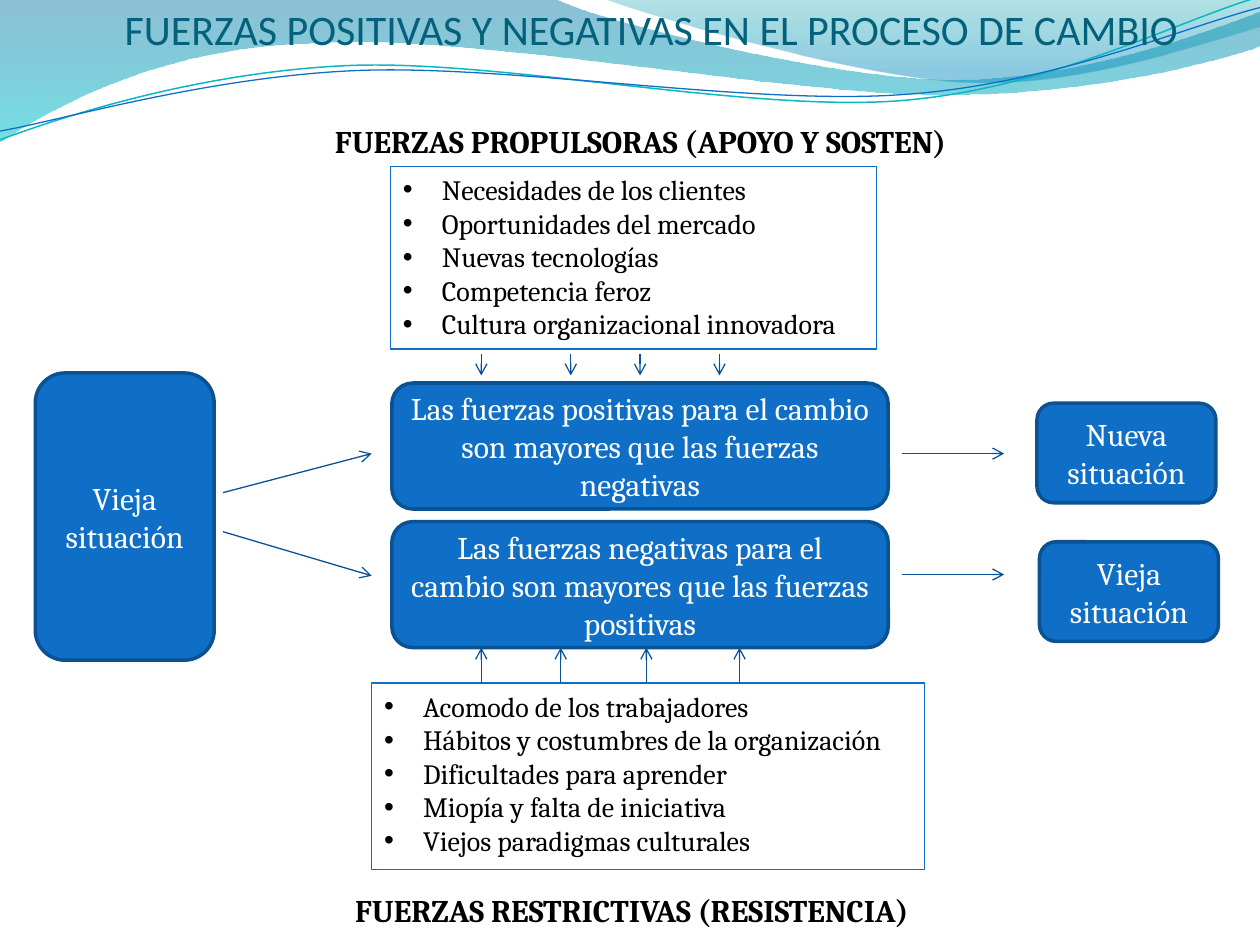
"""Build a slide on the forces for and against change."""
import math
from lxml import etree
from pptx import Presentation, util as u
from pptx.dml.color import RGBColor
from pptx.enum import shapes as s, text as t
from pptx.oxml.ns import qn

TITLE = "FUERZAS POSITIVAS Y NEGATIVAS EN EL PROCESO DE CAMBIO"
HEADS = [
    ("FUERZAS PROPULSORAS (APOYO Y SOSTEN)", (2.56, 0.92, 5.61, 0.4)),
    ("FUERZAS RESTRICTIVAS (RESISTENCIA)", (2.72, 7.02, 5.02, 0.4)),
]
LISTS = [
    (["Necesidades de los clientes", "Oportunidades del mercado",
      "Nuevas tecnologías", "Competencia feroz",
      "Cultura organizacional innovadora"], (3.1, 1.32, 3.86, 1.45)),
    (["Acomodo de los trabajadores", "Hábitos y costumbres de la organización",
      "Dificultades para aprender", "Miopía y falta de iniciativa",
      "Viejos paradigmas culturales"], (2.95, 5.42, 4.39, 1.48)),
]
BOXES = [
    ("Vieja situación", (0.28, 2.96, 1.42, 2.28)),
    ("Nueva situación", (8.23, 3.2, 1.42, 0.79)),
    ("Vieja situación", (8.25, 4.3, 1.42, 0.79)),
    ("Las fuerzas positivas para el cambio son mayores que las fuerzas negativas",
     (3.11, 3.04, 3.94, 1)),
    ("Las fuerzas negativas para el cambio son mayores que las fuerzas positivas",
     (3.11, 4.14, 3.94, 1)),
]
DOWN = [3.82, 4.53, 5.08, 5.71]
UP = [3.82, 4.45, 5.13, 5.87]
ARROWS = [
    (1.77, 3.91, 2.95, 3.6), (1.77, 4.22, 2.95, 4.57),
    (7.16, 3.6, 7.97, 3.6), (7.16, 4.56, 7.97, 4.56),
    *[(x, 2.81, x, 2.98) for x in DOWN],
    *[(x, 5.42, x, 5.14) for x in UP],
]
BANDS = [
    ([(0, 0), (4.4, -0.01), (4.76, 0.17, 6.64, 0.63, 7.58, 0.63),
      (8.53, 0.63, 9.58, 0.26, 10, 0.09), (10.01, 0.36),
      (9.83, 0.44, 8.7, 0.76, 7.46, 0.75), (6.22, 0.75, 3.82, 0.28, 2.57, 0.34),
      (1.29, 0.36, 0.46, 0.83, -0.01, 1.13), (0, 0)],
     [(0, "0074A1", 45), (1, "00C6CF", 55)]),
    ([(4.79, -0.01), (5.09, 0.11, 6.82, 0.62, 7.69, 0.65),
      (8.56, 0.69, 9.61, 0.32, 10, 0.21), (10, 0), (4.79, -0.01)],
     [(0, "00A1A9", 30), (0.8, "008BBF", 45)]),
]
WAVES = [
    ([(0, 1.11), (0.48, 0.93, 1.58, 0.57, 2.77, 0.52),
      (3.95, 0.47, 5.93, 0.89, 7.13, 0.8), (8.33, 0.71, 9.38, 0.15, 9.98, -0.02)],
     "0AB8BF", 0.85),
    ([(0, 1.04), (0.47, 0.96, 1.64, 0.61, 2.83, 0.56),
      (4.03, 0.51, 5.97, 0.84, 7.17, 0.75), (8.36, 0.67, 9.41, 0.21, 10, 0.06)],
     "0F6FC6", 0.75),
]
TILT = -2.7
HUB = (4.99, 0.58)


def tint(color, code):
    color.rgb = RGBColor.from_string(code)


def place(at):
    return [u.Inches(v) for v in at]


def stroke(line, code, width):
    tint(line.color, code)
    line.width = u.Pt(width)


def write(shape, lines, size=18, font="Cambria", color="000000", bold=False,
          align=t.PP_ALIGN.LEFT, anchor=t.MSO_ANCHOR.TOP, bullet=False, wrap=True):
    frame = shape.text_frame
    frame.word_wrap = wrap
    frame.auto_size = (t.MSO_AUTO_SIZE.NONE if wrap
                       else t.MSO_AUTO_SIZE.SHAPE_TO_FIT_TEXT)
    frame.vertical_anchor = anchor
    frame.text = "\n".join(lines)
    for para in frame.paragraphs:
        para.alignment = align
        face = para.runs[0].font
        face.size, face.name, face.bold = u.Pt(size), font, bold
        tint(face.color, color)
        if bullet:
            props = para._p.get_or_add_pPr()
            props.set("marL", str(u.Inches(0.31)))
            props.set("indent", str(-u.Inches(0.31)))
            etree.SubElement(props, qn("a:buFont"), typeface="Arial")
            etree.SubElement(props, qn("a:buChar"), char="•")


def turn(dot, angle):
    a = math.radians(angle)
    x, y = dot[0] - HUB[0], dot[1] - HUB[1]
    return (HUB[0] + x * math.cos(a) - y * math.sin(a),
            HUB[1] + x * math.sin(a) + y * math.cos(a))


def curve(slide, path, close=False, tilt=0):
    dots = [turn(part[i:i + 2], -tilt) for part in path
            for i in range(0, len(part), 2)]
    pen = slide.shapes.build_freeform(*place(dots[0]))
    pen.add_line_segments([place(dot) for dot in dots[1:]], close=close)
    shape = pen.convert_to_shape()
    shape.shadow.inherit = False
    shape.rotation = tilt
    legs = iter(list(shape.element.iter(qn("a:lnTo"))))
    for part in path[1:]:
        leg = next(legs)
        if len(part) == 6:
            leg.addprevious(bend := etree.Element(qn("a:cubicBezTo")))
            for node in (leg, next(legs), next(legs)):
                bend.append(node[0])
                node.getparent().remove(node)
    return shape


def band(slide, path, stops):
    shape = curve(slide, path, close=True)
    shape.line.fill.background()
    shape.fill.gradient()
    shape.fill.gradient_angle = 270
    for stop, (pos, code, alpha) in zip(shape.fill.gradient_stops, stops):
        stop.position = pos
        tint(stop.color, code)
    for node, stop in zip(shape.element.iter(qn("a:srgbClr")), stops):
        etree.SubElement(node, qn("a:alpha"), val=str(stop[2] * 1000))


def wave(slide, path, code, width):
    shape = curve(slide, path, tilt=TILT)
    shape.fill.background()
    stroke(shape.line, code, width)


def box(slide, words, at):
    shape = slide.shapes.add_shape(s.MSO_SHAPE.ROUNDED_RECTANGLE, *place(at))
    shape.shadow.inherit = False
    stroke(shape.line, "0B5292", 2)
    shape.fill.solid()
    tint(shape.fill.fore_color, "0F6FC6")
    write(shape, [words], color="FFFFFF", align=t.PP_ALIGN.CENTER,
          anchor=t.MSO_ANCHOR.MIDDLE)


def arrow(slide, ends):
    link = slide.shapes.add_connector(s.MSO_CONNECTOR.STRAIGHT, *place(ends))
    stroke(link.line, "095295", 0.75)
    etree.SubElement(link.line._get_or_add_ln(), qn("a:tailEnd"), type="arrow")
    etree.SubElement(link.element.spPr, qn("a:effectLst"))


def main():
    deck = Presentation()
    deck.slide_width, deck.slide_height = place((10, 7.5))
    slide = deck.slides.add_slide(deck.slide_layouts[5])
    for item in BANDS:
        band(slide, *item)
    for item in WAVES:
        wave(slide, *item)

    title = slide.shapes.title
    title.element.getparent().append(title.element)
    title.left, title.top, title.width, title.height = place((0.35, 0.05, 9, 0.38))
    write(title, [TITLE], size=24, font="Calibri", color="04617B",
          align=t.PP_ALIGN.RIGHT, anchor=t.MSO_ANCHOR.BOTTOM)
    frame = title.text_frame
    frame.margin_left = frame.margin_right = frame.margin_bottom = 0

    for words, at in HEADS:
        write(slide.shapes.add_textbox(*place(at)), [words], bold=True, wrap=False)
    for lines, at in LISTS:
        shape = slide.shapes.add_textbox(*place(at))
        stroke(shape.line, "0F6FC6", 0.75)
        write(shape, lines, size=16, bullet=True, wrap=False)
    for item in BOXES:
        box(slide, *item)
    for ends in ARROWS:
        arrow(slide, ends)
    deck.save("out.pptx")


if __name__ == "__main__":
    main()
